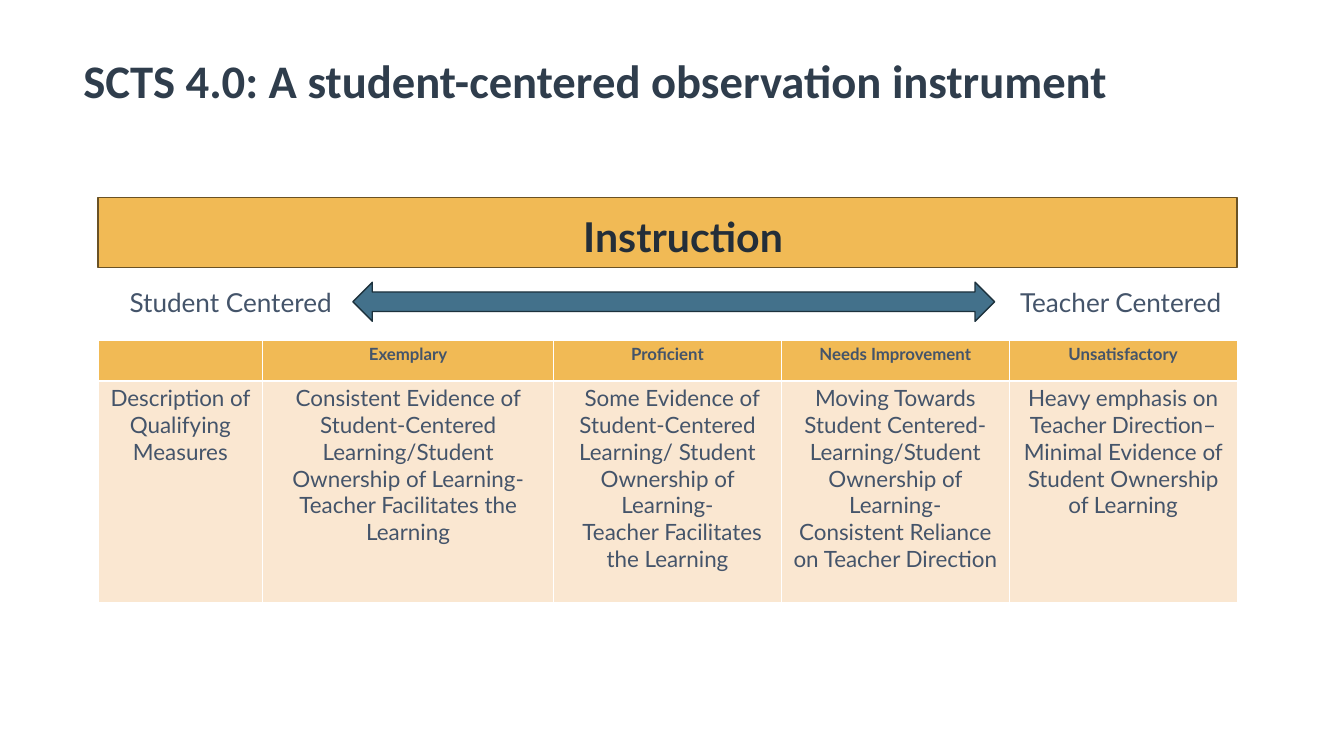
from dataclasses import dataclass

from lxml import etree
from pptx import Presentation
from pptx.dml.color import RGBColor
from pptx.enum.shapes import MSO_SHAPE
from pptx.enum.text import MSO_ANCHOR, MSO_AUTO_SIZE, PP_ALIGN
from pptx.oxml.ns import qn
from pptx.util import Pt

RECTANGLE, DOUBLE_ARROW = MSO_SHAPE.RECTANGLE, MSO_SHAPE.LEFT_RIGHT_ARROW
LEFT, CENTER = PP_ALIGN.LEFT, PP_ALIGN.CENTER
TOP, NO_AUTOFIT = MSO_ANCHOR.TOP, MSO_AUTO_SIZE.NONE


@dataclass(frozen=True)
class TextStyle:
    size: float
    color: str
    bold: bool = False
    face: str = "Lato"


@dataclass(frozen=True)
class Theme:
    gold: str = "F1BA55"
    gold_edge: str = "6A5225"
    blue: str = "43718B"
    blue_edge: str = "1D323D"
    cream: str = "FAE7D1"
    rule: str = "FFFFFF"
    title: TextStyle = TextStyle(50, "2F3D4C", True, "Calibri")
    banner: TextStyle = TextStyle(44, "232E39", True)
    label: TextStyle = TextStyle(28, "44546A")
    heading: TextStyle = TextStyle(18, "44546A", True)
    body: TextStyle = TextStyle(24, "44546A")


@dataclass(frozen=True)
class Box:
    left: float
    top: float
    width: float
    height: float

    def lengths(self) -> tuple:
        return Pt(self.left), Pt(self.top), Pt(self.width), Pt(self.height)


@dataclass(frozen=True)
class Level:
    """One column of the rubric."""
    heading: str
    description: tuple[str, ...]
    width: float
    indent: float = 0
    first_line: float = 0


THEME = Theme()
BANNER = Box(105, 211.7, 1220.4, 74.9)
ARROW = Box(378, 302.4, 687.6, 41.8)
TABLE = Box(105, 365, 1220.4, 280.8)
HEADER_HEIGHT = 43.2
CELL_INSET = 7.2
LABELS = [
    ("Instruction", Box(617.8, 222.5, 239.8, 48.2), THEME.banner),
    ("Student Centered", Box(131.8, 303.1, 365.8, 36), THEME.label),
    ("Teacher Centered", Box(1085.8, 303.1, 266.4, 41), THEME.label),
]
LEVELS = [
    Level("", ("Description of Qualifying Measures",), 176.4),
    Level("Exemplary",
          ("Consistent Evidence of Student-Centered Learning/Student Ownership of Learning-",
           "Teacher Facilitates the Learning"), 311.7),
    Level("Proficient",
          ("Some Evidence of Student-Centered Learning/ Student Ownership of Learning-",
           "Teacher Facilitates the Learning"), 244.1, 8.6, 10),
    Level("Needs Improvement",
          ("Moving Towards Student Centered- Learning/Student Ownership of Learning-",
           "Consistent Reliance on Teacher Direction"), 244.1),
    Level("Unsatisfactory",
          ("Heavy emphasis on Teacher Direction– Minimal Evidence of Student Ownership of Learning",),
          244.1),
]


def rgb(color: str) -> RGBColor:
    return RGBColor.from_string(color)


def write(frame, lines: tuple[str, ...], style: TextStyle, align=LEFT) -> None:
    frame.text = "\n".join(lines)
    for paragraph in frame.paragraphs:
        paragraph.alignment = align
        font = paragraph.font
        font.name, font.size, font.bold = style.face, Pt(style.size), style.bold
        font.color.rgb = rgb(style.color)


def add_title(slide, text: str, box: Box) -> None:
    title = slide.shapes.title
    title.left, title.top, title.width, title.height = box.lengths()
    frame = title.text_frame
    frame.auto_size, frame.vertical_anchor = NO_AUTOFIT, TOP
    frame.margin_top = Pt(5)
    write(frame, (text,), THEME.title)


def add_label(slide, text: str, box: Box, style: TextStyle) -> None:
    frame = slide.shapes.add_textbox(*box.lengths()).text_frame
    frame.word_wrap = True
    write(frame, (text,), style)


def add_block(slide, kind, box: Box, fill: str, edge: str) -> None:
    block = slide.shapes.add_shape(kind, *box.lengths())
    block.shadow.inherit = False
    block.fill.solid()
    block.fill.fore_color.rgb = rgb(fill)
    block.line.color.rgb = rgb(edge)
    block.line.width = Pt(1.5)


def style_cell(cell, fill: str, bottom_width: float) -> None:
    """Rule the four sides, then fill: the schema wants that order."""
    properties = cell._tc.get_or_add_tcPr()
    for side, width in (("L", 1), ("R", 1), ("T", 1), ("B", bottom_width)):
        line = etree.SubElement(properties, qn(f"a:ln{side}"), w=str(Pt(width)))
        paint = etree.SubElement(line, qn("a:solidFill"))
        etree.SubElement(paint, qn("a:srgbClr"), val=THEME.rule)
    cell.fill.solid()
    cell.fill.fore_color.rgb = rgb(fill)


def indent(cell, level: Level) -> None:
    """Inset both sides equally and push in each paragraph's first line."""
    cell.margin_right = Pt(CELL_INSET + level.indent)
    for paragraph in cell.text_frame.paragraphs:
        properties = paragraph._p.get_or_add_pPr()
        properties.set("marL", str(Pt(level.indent)))
        properties.set("indent", str(Pt(level.first_line)))


def add_rubric(slide, levels: list[Level], box: Box) -> None:
    table = slide.shapes.add_table(2, len(levels), *box.lengths()).table
    table.rows[0].height = Pt(HEADER_HEIGHT)
    table.rows[1].height = Pt(box.height - HEADER_HEIGHT)
    for column, level in enumerate(levels):
        table.columns[column].width = Pt(level.width)
        heading, description = table.cell(0, column), table.cell(1, column)
        style_cell(heading, THEME.gold, 3)
        style_cell(description, THEME.cream, 1)
        write(heading.text_frame, (level.heading,), THEME.heading, CENTER)
        write(description.text_frame, level.description, THEME.body, CENTER)
        if level.indent:
            indent(description, level)


def main() -> None:
    deck = Presentation()
    deck.slide_width, deck.slide_height = Pt(1440), Pt(810)
    slide = deck.slides.add_slide(deck.slide_layouts.get_by_name("Title Only"))
    add_title(slide, "SCTS 4.0: A student-centered observation instrument",
              Box(82, 51, 1291.7, 86.4))
    add_block(slide, RECTANGLE, BANNER, THEME.gold, THEME.gold_edge)
    for text, box, style in LABELS:
        add_label(slide, text, box, style)
    add_block(slide, DOUBLE_ARROW, ARROW, THEME.blue, THEME.blue_edge)
    add_rubric(slide, LEVELS, TABLE)
    deck.save("out.pptx")


if __name__ == "__main__":
    main()
